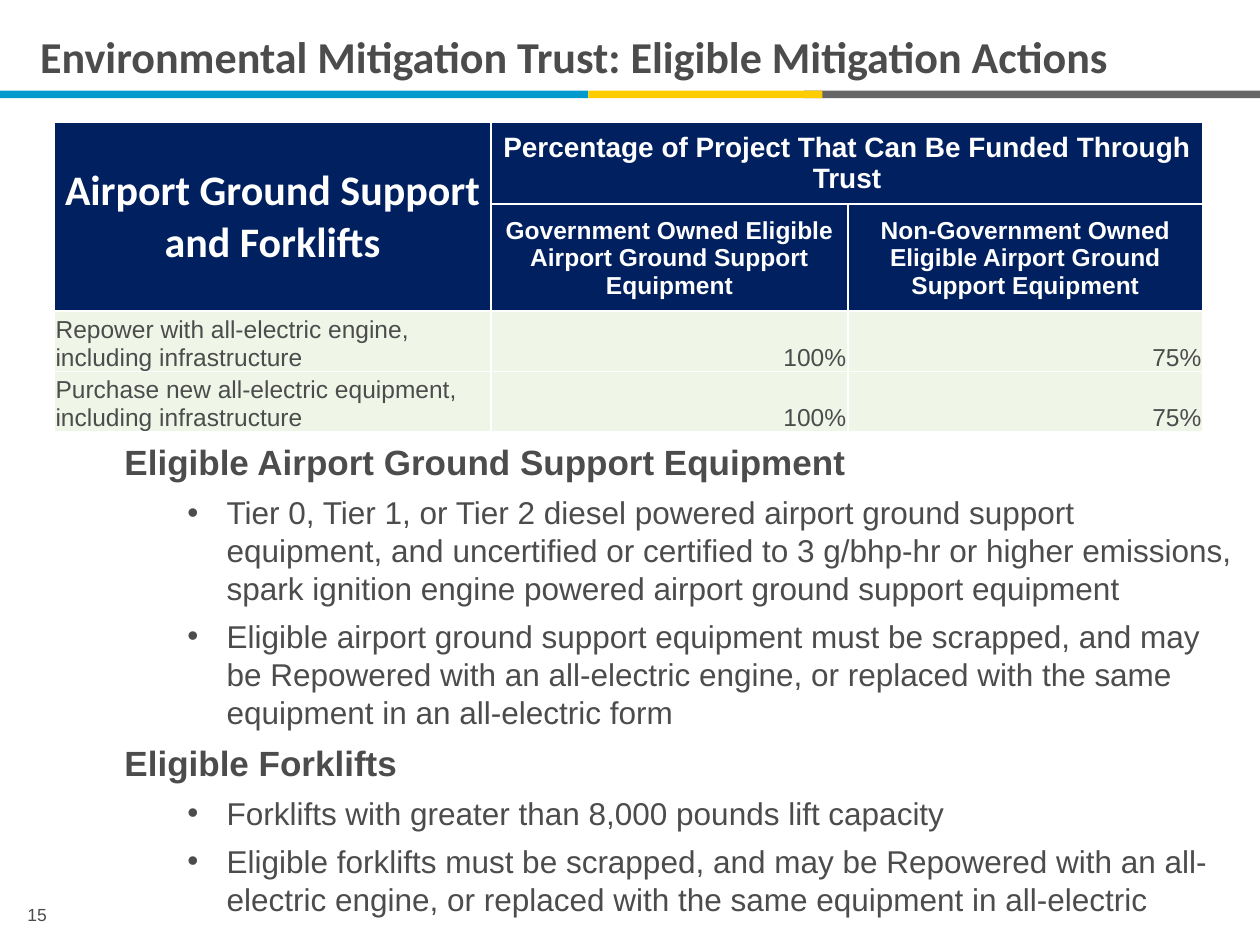
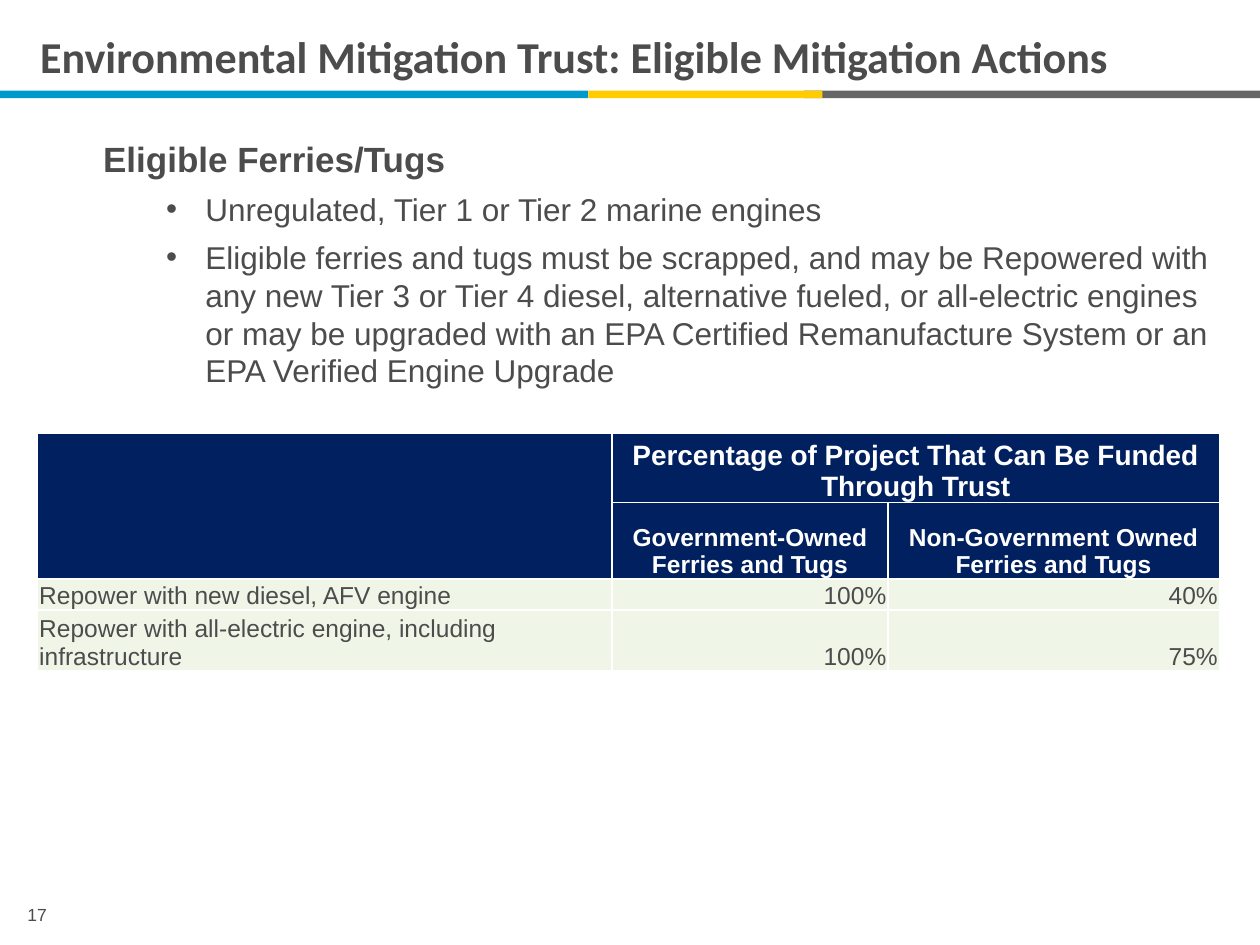
"""Build two slides on eligible mitigation actions."""
from dataclasses import dataclass

from lxml import etree
from pptx import Presentation
from pptx import util as u
from pptx.dml import color
from pptx.enum import shapes, text
from pptx.oxml import ns

WHITE, INK, NAVY, MINT = "FFFFFF", "4C4C4C", "002060", "EFF6E8"
TITLE = "Environmental Mitigation Trust: Eligible Mitigation Actions"
FUNDED = "Percentage of Project That Can Be Funded Through Trust"
ALIGN, ANCHOR = text.PP_ALIGN, text.MSO_ANCHOR


@dataclass(frozen=True)
class Box:
    """A frame, in centimetres."""
    x: float
    y: float
    w: float
    h: float

    def emu(self) -> tuple:
        return tuple(u.Cm(v) for v in (self.x, self.y, self.w, self.h))


@dataclass(frozen=True)
class Band:
    """A coloured piece of the rule under the title."""
    x: float
    w: float
    fill: str


@dataclass(frozen=True)
class Topic:
    """A bold heading with its bullets."""
    heading: str
    bullets: tuple[str, ...]


@dataclass(frozen=True)
class Funding:
    """A funding table: two header rows, then one row per action."""
    x: float
    y: float
    cols: tuple[float, ...]
    rows: tuple[float, ...]
    corner: str
    owners: tuple[str, str]
    actions: tuple[tuple[str, str, str], ...]
    head_anchor: ANCHOR


@dataclass(frozen=True)
class Page:
    """The content of one slide."""
    number: str
    body: Box
    body_fill: str
    topics: tuple[Topic, ...]
    funding: Funding


BANDS = (Band(0, 11.86, "0099CC"), Band(16.21, 9.19, "666666"),
         Band(11.86, 4.72, "FFCC00"))

PAGES = (
    Page("15", Box(0.99, 8.76, 24.23, 9.96), WHITE, (
        Topic("Eligible Airport Ground Support Equipment", (
            "Tier 0, Tier 1, or Tier 2 diesel powered airport ground support "
            "equipment, and uncertified or certified to 3 g/bhp-hr or higher "
            "emissions, spark ignition engine powered airport ground support "
            "equipment",
            "Eligible airport ground support equipment must be scrapped, and "
            "may be Repowered with an all-electric engine, or replaced with "
            "the same equipment in an all-electric form")),
        Topic("Eligible Forklifts", (
            "Forklifts with greater than 8,000 pounds lift capacity",
            "Eligible forklifts must be scrapped, and may be Repowered with "
            "an all-electric engine, or replaced with the same equipment in "
            "all-electric"))),
        Funding(1.09, 2.46, (8.81, 7.19, 7.16), (1.65, 2.16, 1.21, 1.21),
                "Airport Ground Support and Forklifts",
                ("Government Owned Eligible Airport Ground Support Equipment",
                 "Non-Government Owned Eligible Airport Ground Support Equipment"),
                (("Repower with all-electric engine, including infrastructure",
                  "100%", "75%"),
                 ("Purchase new all-electric equipment, including infrastructure",
                  "100%", "75%")), ANCHOR.MIDDLE)),
    Page("17", Box(0.56, 2.64, 24.23, 5.38), "", (
        Topic("Eligible Ferries/Tugs", (
            "Unregulated, Tier 1 or Tier 2 marine engines",
            "Eligible ferries and tugs must be scrapped, and may be Repowered "
            "with any new Tier 3 or Tier 4 diesel, alternative fueled, or "
            "all-electric engines or may be upgraded with an EPA Certified "
            "Remanufacture System or an EPA Verified Engine Upgrade")),),
        Funding(0.76, 8.74, (11.58, 5.56, 6.68), (1.37, 1.55, 0.61, 1.21),
                "", ("Government-Owned Ferries and Tugs",
                     "Non-Government Owned Ferries and Tugs"),
                (("Repower with new diesel, AFV engine", "100%", "40%"),
                 ("Repower with all-electric engine, including infrastructure",
                  "100%", "75%")), ANCHOR.BOTTOM)),
)


def rgb(value: str) -> color.RGBColor:
    return color.RGBColor.from_string(value)


def paint(fill, value: str) -> None:
    fill.solid()
    fill.fore_color.rgb = rgb(value)


def write(p, words: str, *, size: float, font: str = "Arial", ink: str = INK,
          bold: bool = False, align: ALIGN = ALIGN.LEFT, after: float = 0,
          left: float = 0, hang: float = 0, bullet: str = "") -> None:
    pPr = p._p.get_or_add_pPr()
    pPr.set("marL", str(u.Cm(left)))
    pPr.set("indent", str(u.Cm(-hang)))
    if bullet:
        etree.SubElement(pPr, ns.qn("a:buFont"), typeface="Arial")
        etree.SubElement(pPr, ns.qn("a:buChar"), char=bullet)
    p.alignment, p.space_after = align, u.Pt(after)
    r = p.add_run()
    r.text = words
    r.font.size, r.font.name, r.font.bold = u.Pt(size), font, bold
    r.font.color.rgb = rgb(ink)


def add_box(s, box: Box, anchor: ANCHOR = ANCHOR.TOP):
    sp = s.shapes.add_textbox(*box.emu())
    sp.text_frame.word_wrap = True
    sp.text_frame.vertical_anchor = anchor
    return sp


def draw_frame(s, number: str) -> None:
    tf = add_box(s, Box(0.13, 18.14, 1.24, 0.66)).text_frame
    write(tf.paragraphs[0], number, size=10, align=ALIGN.CENTER)
    tf.paragraphs[0].line_spacing = 0.9
    for band in BANDS:
        sp = s.shapes.add_shape(shapes.MSO_SHAPE.RECTANGLE,
                                *Box(band.x, 1.83, band.w, 0.15).emu())
        sp.shadow.inherit = False
        paint(sp.fill, band.fill)
        sp.line.fill.background()
    tf = add_box(s, Box(0.56, 0, 24.23, 2.26), ANCHOR.MIDDLE).text_frame
    write(tf.paragraphs[0], TITLE, size=25.2, font="Calibri", bold=True)


def draw_body(s, page: Page) -> None:
    sp = add_box(s, page.body)
    if page.body_fill:
        paint(sp.fill, page.body_fill)
    tf = sp.text_frame
    for i, topic in enumerate(page.topics):
        p = tf.add_paragraph() if i else tf.paragraphs[0]
        write(p, topic.heading, size=20, bold=True, after=6, left=1.27)
        for bullet in topic.bullets:
            write(tf.add_paragraph(), bullet, size=18, after=6,
                  left=3.33, hang=0.79, bullet="•")


def style_cell(cell, fill: str, anchor: ANCHOR) -> None:
    cell.margin_left = cell.margin_right = cell.margin_top = u.Cm(0.03)
    cell.margin_bottom = 0
    cell.vertical_anchor = anchor
    for side in "LRTB":
        ln = etree.SubElement(cell._tc.get_or_add_tcPr(),
                              ns.qn(f"a:ln{side}"), w=str(u.Pt(1)))
        solid = etree.SubElement(ln, ns.qn("a:solidFill"))
        etree.SubElement(solid, ns.qn("a:srgbClr"), val=WHITE)
    paint(cell.fill, fill)


def draw_funding(s, f: Funding) -> None:
    box = Box(f.x, f.y, sum(f.cols), sum(f.rows))
    table = s.shapes.add_table(len(f.rows), len(f.cols), *box.emu()).table
    for col, width in zip(table.columns, f.cols):
        col.width = u.Cm(width)
    for row, height in zip(table.rows, f.rows):
        row.height = u.Cm(height)
    grid = ((f.corner, FUNDED, ""), ("", *f.owners), *f.actions)
    for i, line in enumerate(grid):
        head = i < 2
        for j, words in enumerate(line):
            cell = table.cell(i, j)
            style_cell(cell, NAVY if head else MINT,
                       f.head_anchor if head else ANCHOR.BOTTOM)
            if not words:
                continue
            corner = head and j == 0
            align = ALIGN.CENTER if head else ALIGN.RIGHT if j else ALIGN.LEFT
            write(cell.text_frame.paragraphs[0], words, bold=head, align=align,
                  size=24 if corner else 16 if i == 0 else 14,
                  font="Calibri" if corner else "Arial",
                  ink=WHITE if head else INK)
    table.cell(0, 0).merge(table.cell(1, 0))
    table.cell(0, 1).merge(table.cell(0, 2))


def main() -> None:
    prs = Presentation()
    prs.slide_width, prs.slide_height = u.Cm(25.4), u.Cm(19.05)
    for page in PAGES:
        s = prs.slides.add_slide(prs.slide_layouts[6])
        paint(s.background.fill, WHITE)
        draw_frame(s, page.number)
        draw_body(s, page)
        draw_funding(s, page.funding)
    prs.save("out.pptx")


if __name__ == "__main__":
    main()
